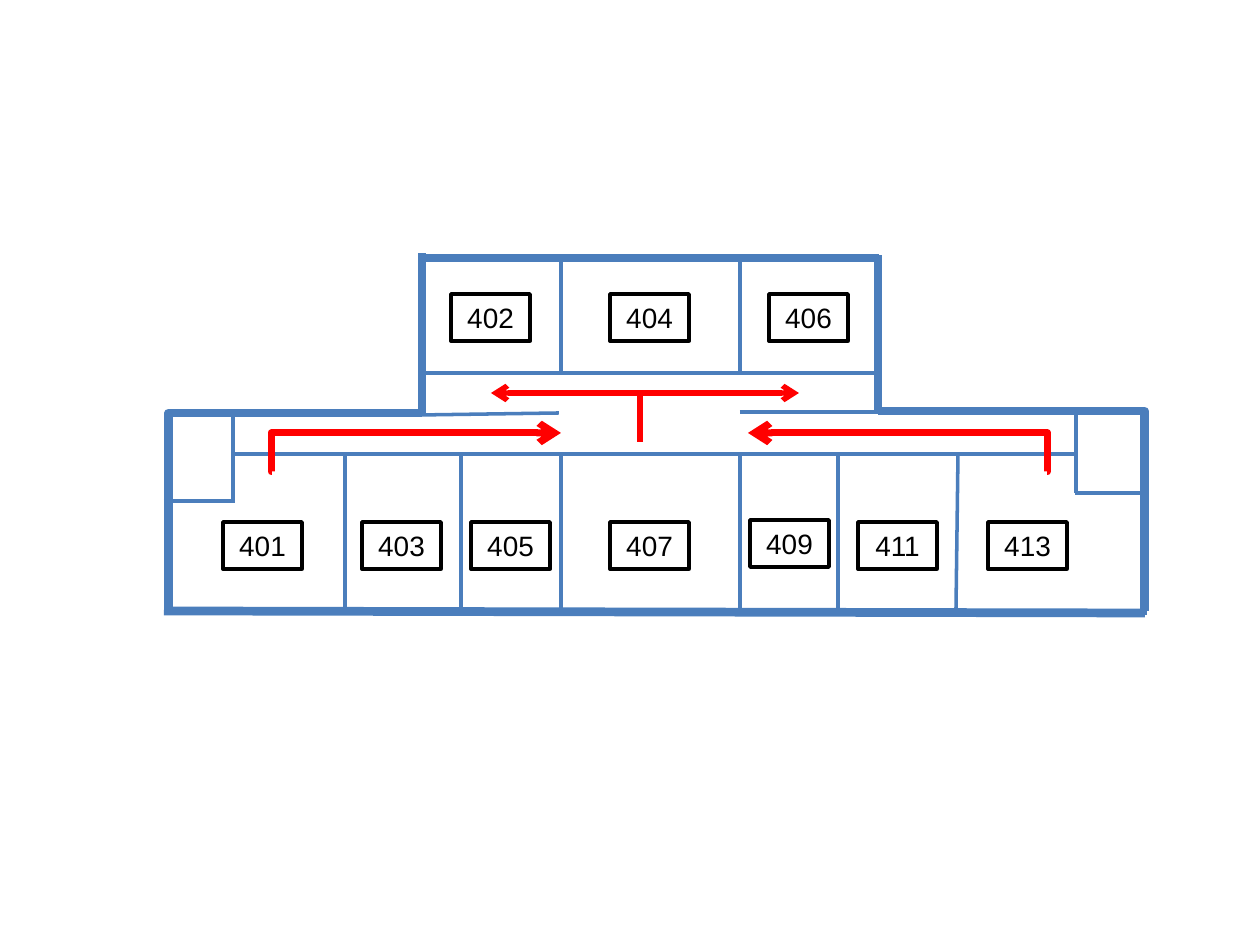
"""Build a floor plan slide with numbered rooms and red evacuation routes."""
import lxml.etree
import pptx
import pptx.dml.color
import pptx.enum.shapes
import pptx.enum.text
import pptx.oxml.ns
import pptx.util

SCALE = 914400 / 126
COLORS = {"wall": "4B7EBC", "route": "FF0000", "label": "000000"}
SLIDE_SIZE = (1260, 945)
LABEL_SIZE = (79, 47)

CORNER_WALLS = [((422, 413), (164, 611), 98200), ((1147, 611), (878, 411), 1000)]
OUTER_WALLS = [
    ((422, 416), (422, 253)),
    ((420, 258), (879, 258)),
    ((164, 611), (1145, 613)),
    ((878, 412), (878, 255)),
]
LOWER_PARTITIONS = [(345, 345), (461, 461), (561, 561), (740, 740), (838, 838), (956, 958)]
UPPER_PARTITIONS = [561, 740]
INNER_WALLS = [
    ((233, 503), (233, 413)),
    ((1076, 493), (1076, 413)),
    ((1144, 493), (1075, 493)),
    ((233, 454), (1076, 454)),
    ((164, 501), (234, 501)),
    ((422, 373), (878, 373)),
    ((421, 415), (559, 413)),
    ((740, 412), (879, 412)),
]
INNER_WALLS += [((bottom, 611), (top, 454)) for bottom, top in LOWER_PARTITIONS]
INNER_WALLS += [((x, 373), (x, 258)) for x in UPPER_PARTITIONS]
CORNER_ROUTES = [((272, 472), (561, 433), -300), ((1047, 472), (748, 433), -100)]
CORRIDOR_ROUTE = ((491, 393), (799, 393))
STAIR_ROUTE = ((640, 393), (640, 442))
ROOMS = [
    ("401", 223, 522), ("403", 362, 522), ("405", 471, 522),
    ("402", 451, 294), ("404", 610, 294), ("406", 769, 294),
    ("407", 610, 522), ("409", 750, 520), ("411", 858, 522), ("413", 988, 522),
]
FRAME_FORMAT = {
    "word_wrap": True,
    "auto_size": pptx.enum.text.MSO_AUTO_SIZE.SHAPE_TO_FIT_TEXT,
}
FONT_FORMAT = {"name": "Arial", "size": pptx.util.Pt(16)}


def emu(pixels):
    return round(pixels * SCALE)


def rgb(name):
    return pptx.dml.color.RGBColor.from_string(COLORS[name])


def add_element(parent, tag, **attributes):
    return lxml.etree.SubElement(parent, pptx.oxml.ns.qn(tag), attributes)


def add_line(slide, start, end, color, width, bend=None, arrows=()):
    kinds = pptx.enum.shapes.MSO_CONNECTOR
    kind = kinds.STRAIGHT if bend is None else kinds.ELBOW
    connector = slide.shapes.add_connector(kind, *map(emu, start + end))
    connector.line.color.rgb = rgb(color)
    connector.line.width = pptx.util.Pt(width)
    properties = connector._element.spPr
    for arrow in arrows:
        add_element(connector.line._get_or_add_ln(), arrow, type="arrow")
    add_element(properties, "a:effectLst")
    if bend is not None:
        adjustments = properties.find(".//" + pptx.oxml.ns.qn("a:avLst"))
        add_element(adjustments, "a:gd", name="adj1", fmla=f"val {bend}")


def add_label(slide, number, left, top):
    shape = slide.shapes.add_textbox(*map(emu, (left, top) + LABEL_SIZE))
    shape.line.color.rgb = rgb("label")
    shape.line.width = pptx.util.Pt(2)
    for name, value in FRAME_FORMAT.items():
        setattr(shape.text_frame, name, value)
    paragraph = shape.text_frame.paragraphs[0]
    paragraph.alignment = pptx.enum.text.PP_ALIGN.CENTER
    run = paragraph.add_run()
    run.text = number
    for name, value in FONT_FORMAT.items():
        setattr(run.font, name, value)
    run.font.color.rgb = rgb("label")


def main():
    presentation = pptx.Presentation()
    presentation.slide_width, presentation.slide_height = map(emu, SLIDE_SIZE)
    slide = presentation.slides.add_slide(presentation.slide_layouts[6])
    for start, end, bend in CORNER_WALLS:
        add_line(slide, start, end, "wall", 5, bend)
    for walls, width in ((OUTER_WALLS, 5), (INNER_WALLS, 2)):
        for start, end in walls:
            add_line(slide, start, end, "wall", width)
    for start, end, bend in CORNER_ROUTES:
        add_line(slide, start, end, "route", 4, bend, ["a:tailEnd"])
    add_line(slide, *CORRIDOR_ROUTE, "route", 3, arrows=["a:headEnd", "a:tailEnd"])
    for room in ROOMS:
        add_label(slide, *room)
    add_line(slide, *STAIR_ROUTE, "route", 3)
    presentation.save("out.pptx")


if __name__ == "__main__":
    main()
